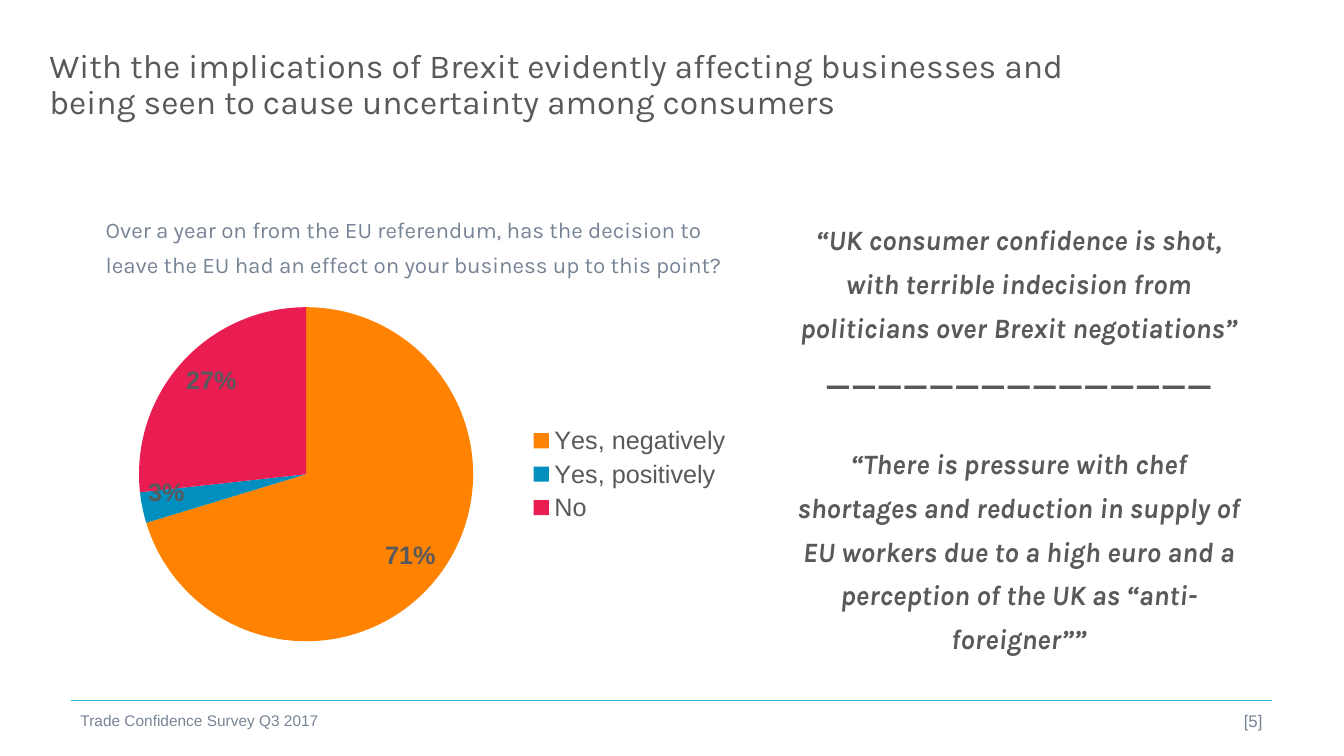
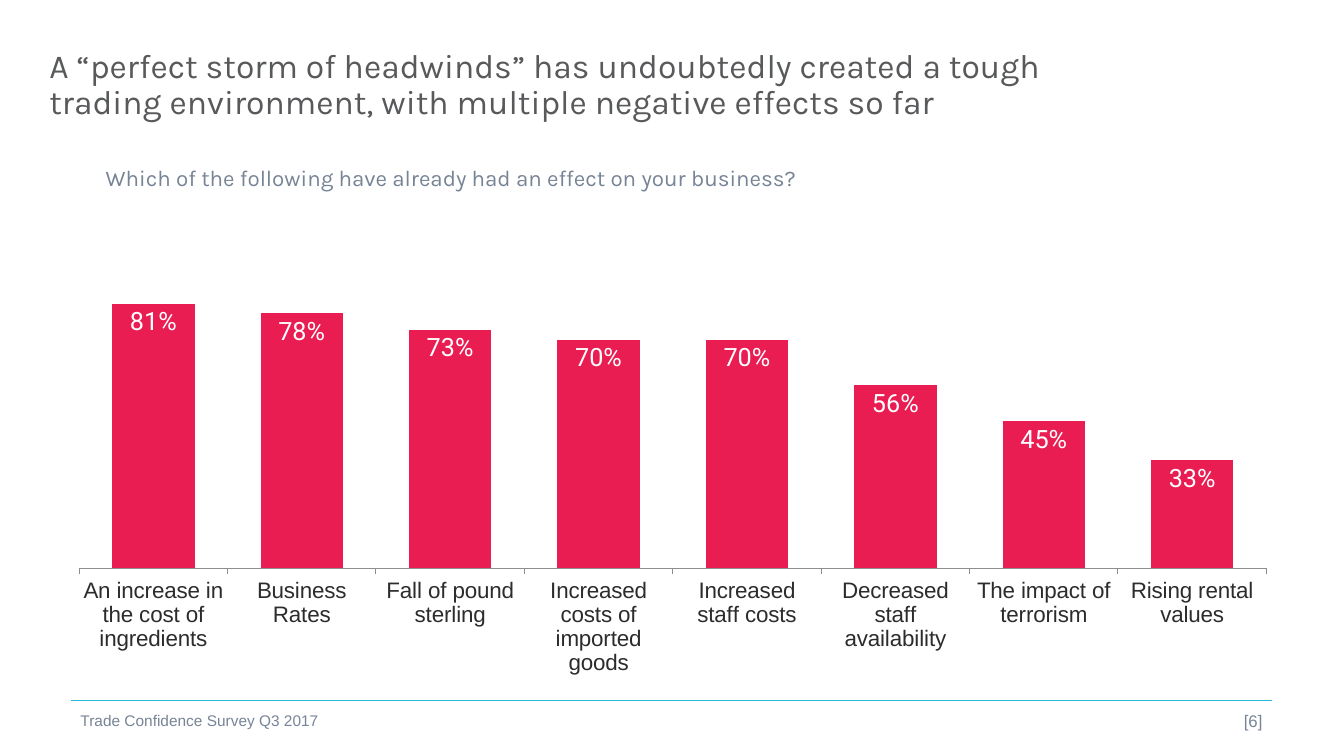
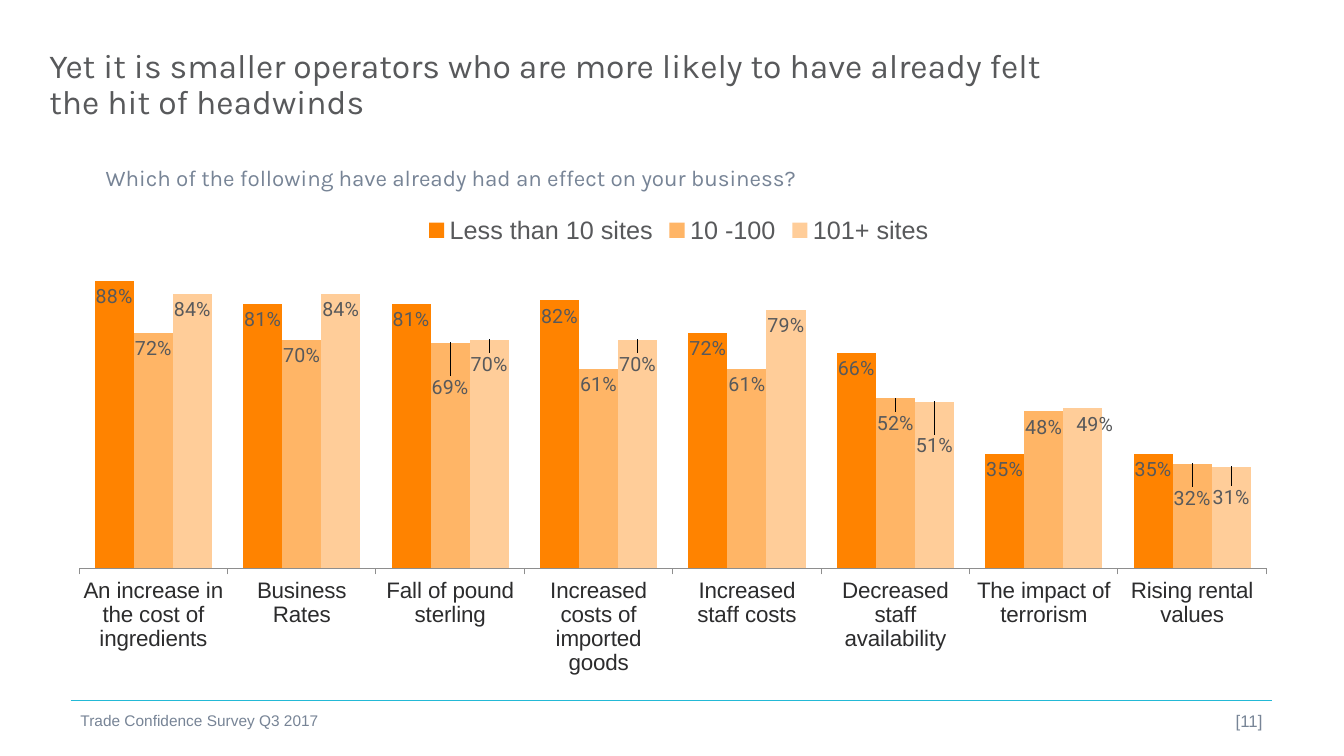
from lxml import etree
from pptx import Presentation
from pptx.chart.data import CategoryChartData
from pptx.dml.color import RGBColor
from pptx.enum import chart as ch, shapes, text
from pptx.oxml.ns import qn
from pptx.util import Inches, Pt

INK, SLATE, AXIS, TEAL = "58595B", "778496", "8E8E8E", "23B9D6"
ORANGE, BLUE, RED = "FF8300", "008FBE", "EA1D53"
FOOTER = "Trade Confidence Survey Q3 2017"
PERCENT = "0%"

PIE_TITLE = ("With the implications of Brexit evidently affecting businesses and "
             "being seen to cause uncertainty among consumers")
PIE_QUESTION = ("Over a year on from the EU referendum, has the decision to leave "
                "the EU had an effect on your business up to this point?")
ANSWERS = [("Yes, negatively", 0.71, ORANGE),
           ("Yes, positively", 0.03, BLUE),
           ("No", 0.27, RED)]
QUOTES = [
    dict(line="“UK consumer confidence is shot, with terrible indecision from "
              "politicians over Brexit negotiations”", size=20, italic=True),
    dict(line="_______________", size=24, italic=False),
    dict(line="“There is pressure with chef shortages and reduction in supply of EU "
              "workers due to a high euro and a perception of the UK as “anti-foreigner””",
         size=20, italic=True, before=29),
]

EFFECT_QUESTION = "Which of the following have already had an effect on your business?"
EFFECTS = ["An increase in the cost of ingredients", "Business Rates",
           "Fall of pound sterling", "Increased costs of imported goods",
           "Increased staff costs", "Decreased staff availability",
           "The impact of terrorism", "Rising rental values"]
EFFECT_SLIDES = [
    dict(title="A “perfect storm of headwinds” has undoubtedly created a tough "
               "trading environment, with multiple negative effects so far",
         page=6, label_size=18, label_color="FFFFFF", legend=False,
         series=[("Series 1", RED, [0.81, 0.78, 0.73, 0.7, 0.7, 0.56, 0.45, 0.33], {})]),
    dict(title="Yet it is smaller operators who are more likely to have already felt "
               "the hit of headwinds",
         page=11, label_size=14, label_color=INK, legend=True,
         series=[
             ("Less than 10 sites", ORANGE,
              [0.88, 0.81, 0.81, 0.82, 0.72, 0.66, 0.35, 0.35], {}),
             ("10 -100", "FFB566",
              [0.72, 0.7, 0.69, 0.61, 0.61, 0.52, 0.48, 0.32],
              {2: (0, 0.06), 5: (0, 0.02), 7: (0, 0.04)}),
             ("101+ sites", "FFCD99",
              [0.84, 0.84, 0.7, 0.7, 0.79, 0.51, 0.49, 0.31],
              {2: (0, 0.02), 3: (0, 0.02), 5: (0, 0.06), 6: (0.01, 0), 7: (0, 0.03)}),
         ]),
]


def rgb(value):
    return RGBColor.from_string(value)


def style(font, size, color, name, bold=False, italic=False):
    font.size, font.name, font.bold, font.italic = Pt(size), name, bold, italic
    font.color.rgb = rgb(color)


def add_text(slide, box, lines, color, name="Karla", spacing=1.0, bold=False,
             align=text.PP_ALIGN.LEFT, anchor=text.MSO_ANCHOR.TOP, inset=(0.1, 0.05)):
    frame = slide.shapes.add_textbox(*map(Inches, box)).text_frame
    frame.word_wrap = True
    frame.vertical_anchor = anchor
    frame.margin_left = frame.margin_right = Inches(inset[0])
    frame.margin_top = frame.margin_bottom = Inches(inset[1])
    for i, item in enumerate(lines):
        paragraph = frame.add_paragraph() if i else frame.paragraphs[0]
        paragraph.text = item["line"]
        paragraph.alignment = align
        paragraph.line_spacing = spacing
        if "before" in item:
            paragraph.space_before = Pt(item["before"])
        for run in paragraph.runs:
            style(run.font, item["size"], color, name, bold, item.get("italic", False))


def add_page(deck, title, page):
    slide = deck.slides.add_slide(deck.slide_layouts[6])
    rule = slide.shapes.add_connector(
        shapes.MSO_CONNECTOR.STRAIGHT,
        Inches(0.7), Inches(6.95), Inches(12.62), Inches(6.95))
    rule.line.color.rgb = rgb(TEAL)
    rule.line.width = Pt(1)
    etree.SubElement(rule._element.spPr, qn("a:effectLst"))
    add_text(slide, (0.39, 0.44, 10.39, 0.75), [dict(line=title, size=24)], INK, spacing=0.9)
    footer = dict(color=SLATE, name="Arial", anchor=text.MSO_ANCHOR.MIDDLE)
    add_text(slide, (9.62, 6.95, 3, 0.4), [dict(line=f"[{page}]", size=12)],
             align=text.PP_ALIGN.RIGHT, **footer)
    add_text(slide, (0.7, 6.95, 4.5, 0.4), [dict(line=FOOTER, size=11)], **footer)
    return slide


def add_question(slide, box, question):
    add_text(slide, box, [dict(line=question, size=16)], SLATE, spacing=1.3)


def add_chart(slide, kind, box, categories, series, name):
    data = CategoryChartData(number_format=PERCENT)
    data.categories = categories
    for label, values in series:
        data.add_series(label, values)
    chart = slide.shapes.add_chart(kind, *map(Inches, box), data).chart
    chart.has_title = False
    chart.has_legend = False
    style(chart.font, 18, INK, name)
    return chart


def add_legend(chart, position):
    chart.has_legend = True
    chart.legend.position = position
    chart.legend.include_in_layout = False
    style(chart.legend.font, 18, INK, "Arial")


def label_values(series, size, color, name, bold=False):
    labels = series.data_labels
    labels.show_value = True
    labels.number_format = PERCENT
    labels.number_format_is_linked = False
    labels.position = ch.XL_LABEL_POSITION.INSIDE_END
    style(labels.font, size, color, name, bold)


def manual_layout(**settings):
    layout = etree.Element(qn("c:layout"))
    manual = etree.SubElement(layout, qn("c:manualLayout"))
    for tag, value in settings.items():
        etree.SubElement(manual, qn(f"c:{tag}")).set("val", str(value))
    return layout


def shift_labels(series, shifts, size, color, name):
    for index, (x, y) in shifts.items():
        label = series.points[index].data_label
        style(label.font, size, color, name)
        label.position = ch.XL_LABEL_POSITION.INSIDE_END
        element = series._element.xpath(f"c:dLbls/c:dLbl[c:idx/@val='{index}']")[0]
        element.insert(1, manual_layout(x=x, y=y))


def place_plot(chart):
    plot_area = chart._chartSpace.chart.plotArea
    for old in plot_area.findall(qn("c:layout")):
        plot_area.remove(old)
    plot_area.insert(0, manual_layout(layoutTarget="inner", xMode="edge", yMode="edge",
                                      x=0, y=0.08, w=0.99, h=0.69))


def build_pie_slide(deck):
    slide = add_page(deck, PIE_TITLE, 5)
    names, shares, colors = zip(*ANSWERS)
    chart = add_chart(slide, ch.XL_CHART_TYPE.PIE, (0.86, 2.91, 6.5, 3.59),
                      names, [("Series 1", shares)], "Arial")
    add_legend(chart, ch.XL_LEGEND_POSITION.RIGHT)
    answers = chart.plots[0].series[0]
    for i, color in enumerate(colors):
        fill = answers.points[i].format.fill
        fill.solid()
        fill.fore_color.rgb = rgb(color)
    label_values(answers, 18, INK, "Arial", bold=True)
    add_question(slide, (0.95, 2.02, 6.35, 0.77), PIE_QUESTION)
    add_text(slide, (7.69, 2.04, 4.83, 4.25), QUOTES, INK, spacing=1.3, bold=True,
             align=text.PP_ALIGN.CENTER, inset=(0.13, 0.07))


def build_effect_slide(deck, title, page, label_size, label_color, legend, series):
    slide = add_page(deck, title, page)
    chart = add_chart(slide, ch.XL_CHART_TYPE.COLUMN_CLUSTERED, (0.78, 2.02, 11.9, 4.7),
                      EFFECTS, [(name, values) for name, _, values, _ in series], "Roboto")
    if legend:
        add_legend(chart, ch.XL_LEGEND_POSITION.TOP)
    place_plot(chart)
    plot = chart.plots[0]
    plot.gap_width, plot.overlap, plot.vary_by_categories = 80, 0, False
    shares = chart.value_axis
    shares.visible = shares.has_major_gridlines = False
    shares.minimum_scale, shares.maximum_scale = 0, 1
    effects = chart.category_axis
    effects.major_tick_mark = ch.XL_TICK_MARK.OUTSIDE
    effects.format.line.color.rgb = rgb(AXIS)
    style(effects.tick_labels.font, 16, "2C2C2D", "Arial")
    for bars, (_, color, _, shifts) in zip(plot.series, series):
        bars.format.fill.solid()
        bars.format.fill.fore_color.rgb = rgb(color)
        label_values(bars, label_size, label_color, "Roboto")
        shift_labels(bars, shifts, label_size, label_color, "Roboto")
    add_question(slide, (0.95, 1.5, 11.78, 0.45), EFFECT_QUESTION)


def main():
    deck = Presentation()
    deck.slide_width, deck.slide_height = Inches(13.33), Inches(7.5)
    build_pie_slide(deck)
    for content in EFFECT_SLIDES:
        build_effect_slide(deck, **content)
    deck.save("out.pptx")


if __name__ == "__main__":
    main()
